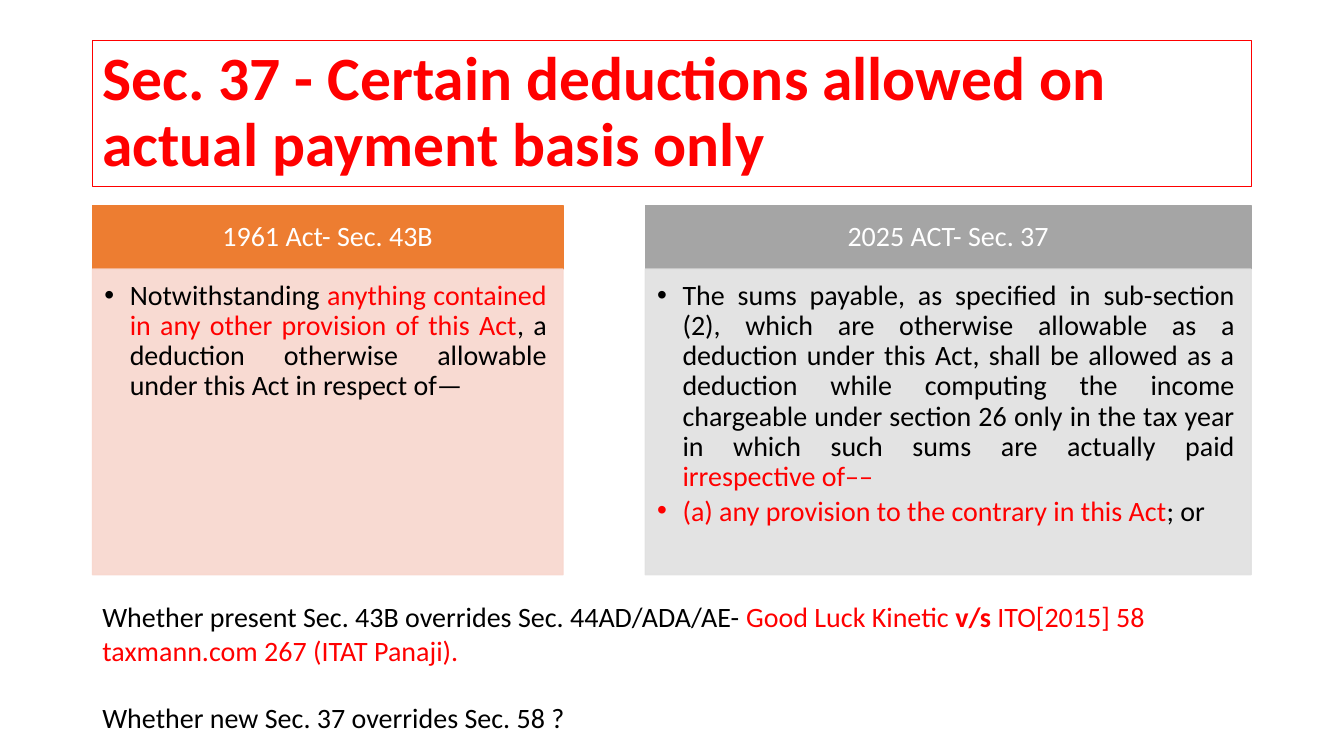
"""Build a slide comparing Sec. 43B of the 1961 Act with Sec. 37 of the 2025 Act."""
from dataclasses import dataclass

from lxml import etree
from pptx import Presentation
from pptx.dml import color
from pptx.enum import text
from pptx.oxml import ns
from pptx.util import Cm, Pt

COLORS = {
    "red": "FF0000", "black": "000000", "white": "FFFFFF",
    "orange": "ED7D31", "peach": "F8D7CE", "gray": "A5A5A5", "silver": "E1E1E1",
}
LEFT, WIDTH = 2.33, 29.21
HEADER_TOP, HEADER_HEIGHT, BODY_HEIGHT = 5.18, 1.6, 7.7
HEADER_INSETS = (0.41, 0.23, 0.41, 0.23)
BODY_INSETS = (0.3, 0.3, 0.41, 0.43)
BULLET_INDENT = Cm(0.64)


@dataclass
class Words:
    content: str
    color: str = "black"
    bold: bool = False


@dataclass
class Column:
    header_index: int
    body_index: int
    left: float
    width: float
    header_color: str
    body_color: str
    heading: str
    points: list[list[Words]]


COLUMNS = [
    Column(1, 2, LEFT, 11.86, "orange", "peach", "1961 Act- Sec. 43B", [
        [Words("Notwithstanding "),
         Words("anything contained in any other provision of this Act", "red"),
         Words(", a deduction otherwise allowable under this Act in respect of—")],
    ]),
    Column(3, 4, 16.26, 15.27, "gray", "silver", "2025 ACT- Sec. 37", [
        [Words("The sums payable, as specified in sub-section (2), which are otherwise "
               "allowable as a deduction under this Act, shall be allowed as a deduction "
               "while computing the income chargeable under section 26 only in the tax "
               "year in which such sums are actually paid "),
         Words("irrespective of––", "red")],
        [Words("(a) any provision to the contrary in this Act", "red"), Words("; or")],
    ]),
]
QUESTIONS = [
    [Words("Whether present Sec. 43B overrides Sec. 44AD/ADA/AE- "),
     Words("Good Luck Kinetic ", "red"),
     Words("v/s", "red", True),
     Words(" ITO[2015] 58 taxmann.com 267 (ITAT Panaji).", "red")],
    [Words("Whether new Sec. 37 overrides Sec. 58 ?")],
]


def rgb(name: str) -> color.RGBColor:
    """Return the named colour."""
    return color.RGBColor.from_string(COLORS[name])


def place(shape, left: float, top: float, width: float, height: float) -> None:
    """Move and size a shape in centimetres."""
    shape.left, shape.top = Cm(left), Cm(top)
    shape.width, shape.height = Cm(width), Cm(height)


def paint(shape, name: str, alpha: int = 100) -> None:
    """Give a shape a fill and matching line with the given opacity percentage."""
    shape.fill.solid()
    shape.line.width = Pt(1)
    for fill in (shape.fill, shape.line.fill):
        fill.solid()
        fill.fore_color.rgb = rgb(name)
    if alpha < 100:
        for element in shape.element.spPr.iter(ns.qn("a:srgbClr")):
            etree.SubElement(element, ns.qn("a:alpha"), val=str(alpha * 1000))


def format_frame(frame, anchor, insets: tuple[float, ...]) -> None:
    """Set wrapping, anchor and insets of a text frame."""
    frame.word_wrap = True
    frame.auto_size = text.MSO_AUTO_SIZE.NONE
    frame.vertical_anchor = anchor
    (frame.margin_left, frame.margin_top,
     frame.margin_right, frame.margin_bottom) = map(Cm, insets)


def write(frame, paragraphs: list[list[Words]], align, size: int = 20,
          spacing: float = 0.9, gap: int = 0, bullet: bool = False) -> None:
    """Write paragraphs run by run, with a gap in points between them."""
    for index, runs in enumerate(paragraphs):
        paragraph = frame.add_paragraph() if index else frame.paragraphs[0]
        paragraph.alignment = align
        paragraph.line_spacing = spacing
        paragraph.space_before = Pt(gap if index else 0)
        paragraph.space_after = Pt(0)
        if bullet:
            properties = paragraph._p.get_or_add_pPr()
            properties.set("marL", str(BULLET_INDENT))
            properties.set("indent", str(-BULLET_INDENT))
            etree.SubElement(properties, ns.qn("a:buChar"), char="•")
        for words in runs:
            run = paragraph.add_run()
            run.text = words.content
            run.font.name = "Calibri"
            run.font.size = Pt(size)
            run.font.bold = words.bold
            run.font.color.rgb = rgb(words.color)


def add_title(slide) -> None:
    """Fill the outlined title."""
    title = slide.shapes.title
    place(title, LEFT, 1.02, WIDTH, 3.68)
    title.line.color.rgb = rgb("red")
    title.line.width = Pt(0.25)
    format_frame(title.text_frame, text.MSO_ANCHOR.MIDDLE, (0.25, 0.13, 0.25, 0.13))
    heading = "Sec. 37 - Certain deductions allowed on actual payment basis only"
    write(title.text_frame, [[Words(heading, "red", True)]], text.PP_ALIGN.LEFT, size=44)


def add_column(slide, column: Column) -> None:
    """Fill one header and the list below it."""
    header = slide.placeholders[column.header_index]
    place(header, column.left, HEADER_TOP, column.width, HEADER_HEIGHT)
    paint(header, column.header_color)
    format_frame(header.text_frame, text.MSO_ANCHOR.MIDDLE, HEADER_INSETS)
    write(header.text_frame, [[Words(column.heading, "white")]], text.PP_ALIGN.CENTER)

    body = slide.placeholders[column.body_index]
    place(body, column.left, HEADER_TOP + HEADER_HEIGHT, column.width, BODY_HEIGHT)
    paint(body, column.body_color, alpha=90)
    format_frame(body.text_frame, text.MSO_ANCHOR.TOP, BODY_INSETS)
    write(body.text_frame, column.points, text.PP_ALIGN.JUSTIFY, gap=3, bullet=True)


def add_questions(slide) -> None:
    """Add the closing questions."""
    box = slide.shapes.add_textbox(Cm(LEFT), Cm(14.99), Cm(WIDTH), Cm(3.68))
    box.text_frame.word_wrap = True
    box.text_frame.auto_size = text.MSO_AUTO_SIZE.SHAPE_TO_FIT_TEXT
    write(box.text_frame, QUESTIONS, text.PP_ALIGN.LEFT, spacing=1.0, gap=24)


def main() -> None:
    """Build and save the presentation."""
    presentation = Presentation()
    presentation.slide_width, presentation.slide_height = Cm(33.87), Cm(19.05)
    slide = presentation.slides.add_slide(
        presentation.slide_layouts.get_by_name("Comparison"))
    add_title(slide)
    for column in COLUMNS:
        add_column(slide, column)
    add_questions(slide)
    presentation.save("out.pptx")


if __name__ == "__main__":
    main()
